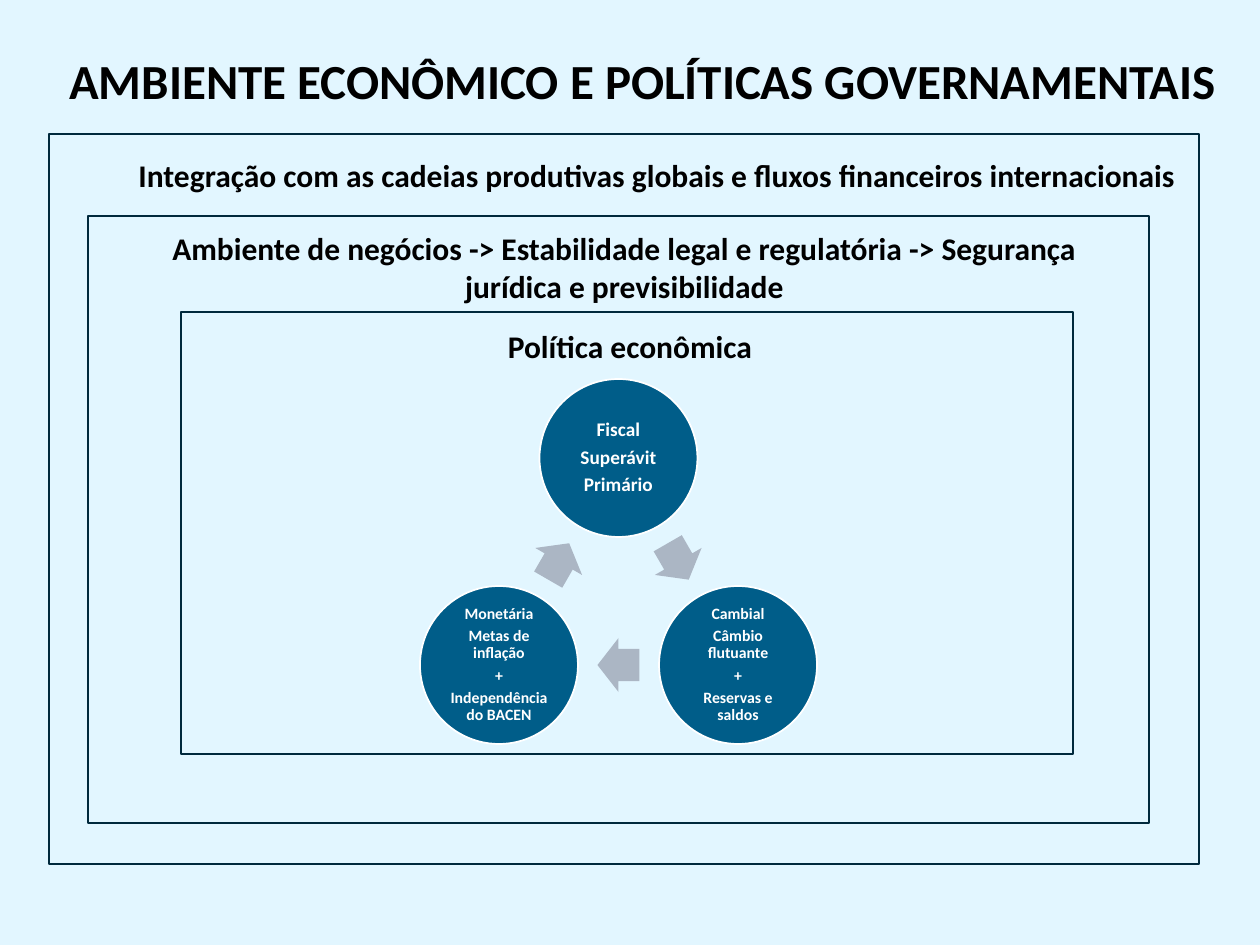
"""Build the slide on economic environment and government policies."""
from math import cos, radians, sin

from pptx import Presentation
from pptx.dml.color import RGBColor
from pptx.enum.shapes import MSO_SHAPE as Shape
from pptx.enum.text import MSO_ANCHOR as Anchor, PP_ALIGN as Align
from pptx.util import Emu, Pt

PX = 914400 // 126
FONT = "Calibri"
COLORS = {
    "background": "E2F6FF",
    "frame": "00293C",
    "circle": "005D89",
    "arrow": "ABB6C4",
    "white": "FFFFFF",
    "black": "000000",
}

TITLE = ("AMBIENTE ECONÔMICO E POLÍTICAS GOVERNAMENTAIS", (57, 42, 1172, 84))
FRAMES = [(49, 134, 1150, 730), (88, 216, 1061, 607), (181, 312, 892, 442)]
HEADINGS = [
    ("Integração com as cadeias produtivas globais e fluxos financeiros internacionais",
     (103, 150, 1108, 51)),
    ("Ambiente de negócios -> Estabilidade legal e regulatória -> Segurança "
     "jurídica e previsibilidade", (120, 223, 1009, 89)),
    ("Política econômica", (280, 321, 700, 51)),
]
POLICIES = [
    (11, ["Fiscal", "Superávit", "Primário"]),
    (9, ["Cambial", "Câmbio flutuante", "+", "Reservas e saldos"]),
    (9, ["Monetária", "Metas de inflação", "+", "Independência do BACEN"]),
]
CYCLE_CENTER = (618.5, 596)
CYCLE_RADIUS = 138
CIRCLE_SIZE = (158, 158)
ARROW_SIZE = (42, 54)


def color(name):
    return RGBColor.from_string(COLORS[name])


def scaled(lengths):
    return [Emu(round(length * PX)) for length in lengths]


def add_shape(page, kind, place, fill=None, line=None):
    shape = page.shapes.add_shape(kind, *scaled(place))
    shape.shadow.inherit = False
    if fill:
        shape.fill.solid()
        shape.fill.fore_color.rgb = color(fill)
    else:
        shape.fill.background()
    if line:
        shape.line.color.rgb = color(line)
        shape.line.width = Pt(1)
    else:
        shape.line.fill.background()
    return shape


def write(box, lines, size, ink, align=Align.CENTER, spacing=1, after=0):
    frame = box.text_frame
    frame.word_wrap = True
    for index, line in enumerate(lines):
        para = frame.paragraphs[0] if index == 0 else frame.add_paragraph()
        para.alignment = align
        para.line_spacing = spacing
        para.space_after = Pt(after)
        span = para.add_run()
        span.text = line
        span.font.name = FONT
        span.font.size = Pt(size)
        span.font.bold = True
        span.font.color.rgb = color(ink)
    return frame


def on_cycle(angle, radius, size):
    x = CYCLE_CENTER[0] + radius * cos(radians(angle))
    y = CYCLE_CENTER[1] + radius * sin(radians(angle))
    width, height = size
    return x - width / 2, y - height / 2, width, height


def add_cycle(page):
    step = 360 / len(POLICIES)
    for index, (size, lines) in enumerate(POLICIES):
        angle = index * step - 90
        circle = add_shape(page, Shape.OVAL, on_cycle(angle, CYCLE_RADIUS, CIRCLE_SIZE),
                           "circle", "white")
        frame = write(circle, lines, size, "white", spacing=0.9, after=round(size * 0.35, 1))
        frame.vertical_anchor = Anchor.MIDDLE
        inset = Emu(2 * PX)
        frame.margin_left = frame.margin_right = inset
        frame.margin_top = frame.margin_bottom = inset

        middle = angle + step / 2
        radius = CYCLE_RADIUS * cos(radians(step / 2))
        arrow = add_shape(page, Shape.RIGHT_ARROW, on_cycle(middle, radius, ARROW_SIZE), "arrow")
        arrow.adjustments[0] = 0.6
        arrow.adjustments[1] = 0.5
        arrow.rotation = middle + 90


def main():
    deck = Presentation()
    deck.slide_width, deck.slide_height = scaled((1260, 945))
    page = deck.slides.add_slide(deck.slide_layouts[6])
    page.background.fill.solid()
    page.background.fill.fore_color.rgb = color("background")

    text, place = TITLE
    title = page.shapes.add_textbox(*scaled(place))
    frame = write(title, [text], 28, "black", Align.LEFT, 0.9)
    frame.vertical_anchor = Anchor.MIDDLE
    frame.margin_right = 0

    for place in FRAMES:
        add_shape(page, Shape.RECTANGLE, place, line="frame")
    add_cycle(page)
    for text, place in HEADINGS:
        write(page.shapes.add_textbox(*scaled(place)), [text], 18, "black")

    deck.save("out.pptx")


if __name__ == "__main__":
    main()
